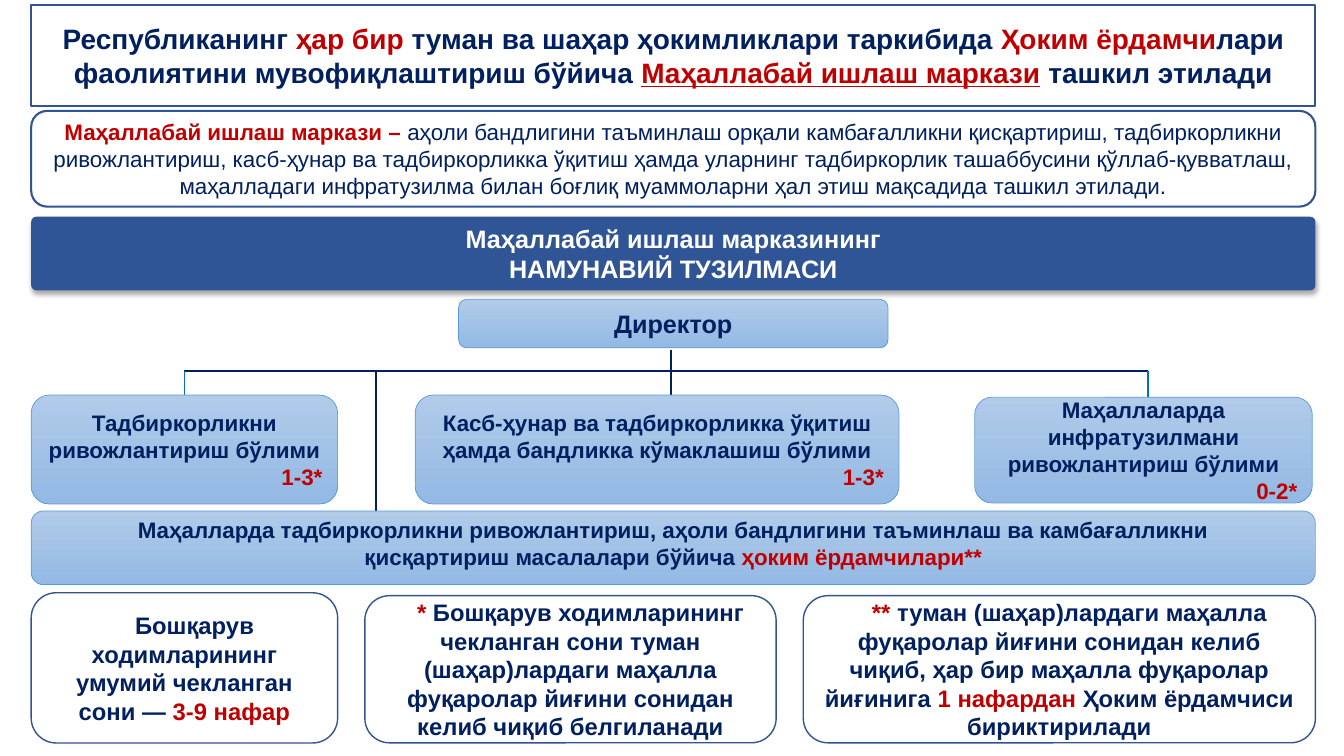
"""Build the slide on the structure of the neighbourhood work centre."""
import pptx
import pptx.dml.color
import pptx.enum.shapes
import pptx.enum.text
import pptx.oxml
import pptx.oxml.ns
import pptx.util

Pt = pptx.util.Pt
ALIGN = pptx.enum.text.PP_ALIGN
ANCHOR = pptx.enum.text.MSO_ANCHOR

COLOURS = {
    "navy": "002060", "red": "C00000", "white": "FFFFFF", "band": "2F5597",
    "frame": "325491", "edge": "5B9BD5", "branch": "0070C0",
    "light": "B1CBE9", "dark": "93B9E4",
}
LEFT, FULL_WIDTH = 22.3, 917.3

HEADLINE = [[
    ("Республиканинг", {}), (" ҳар бир ", {"colour": "red"}),
    ("туман ва шаҳар ҳокимликлари таркибида ", {}),
    ("Ҳоким ёрдамчи", {"colour": "red"}),
    ("лари фаолиятини мувофиқлаштириш бўйича ", {}),
    ("Маҳаллабай ишлаш маркази", {"colour": "red", "underline": True}),
    (" ташкил этилади", {}),
]]
DEFINITION = [[
    ("Маҳаллабай ишлаш маркази – ", {"colour": "red"}),
    ("аҳоли бандлигини таъминлаш орқали камбағалликни қисқартириш, "
     "тадбиркорликни ривожлантириш, касб-ҳунар ва тадбиркорликка ўқитиш "
     "ҳамда уларнинг тадбиркорлик ташаббусини қўллаб-қувватлаш, "
     "маҳалладаги инфратузилма билан боғлиқ муаммоларни ҳал этиш "
     "мақсадида ташкил этилади.", {"bold": False}),
]]
STRUCTURE = [[("Маҳаллабай ишлаш марказининг", {})],
             [("НАМУНАВИЙ ТУЗИЛМАСИ", {})]]
DIRECTOR = [[("Директор", {})]]
DEPARTMENTS = [
    ("Тадбиркорликни ривожлантириш бўлими", "1-3*", (LEFT, 282.2, 218.9, 77.8)),
    ("Касб-ҳунар ва тадбиркорликка ўқитиш ҳамда бандликка кўмаклашиш бўлими",
     "1-3*", (296.6, 282.2, 345.6, 77.8)),
    ("Маҳаллаларда инфратузилмани ривожлантириш бўлими", "0-2*",
     (696.2, 283.7, 241.2, 75.6)),
]
ASSISTANTS = [[
    ("Маҳалларда тадбиркорликни ривожлантириш, аҳоли бандлигини таъминлаш "
     "ва камбағалликни", {}),
    ("\n", {}),
    ("қисқартириш масалалари бўйича ", {}),
    ("ҳоким ёрдамчилари**", {"colour": "red"}),
]]
NOTES = [
    ([("Бошқарув ходимларининг умумий чекланган сони — ", {}),
      ("3-9 нафар", {"colour": "red"})], (LEFT, 423.4, 218.9, 107.3)),
    ([("*", {"colour": "red"}),
      (" Бошқарув ходимларининг чекланган сони туман (шаҳар)лардаги маҳалла "
       "фуқаролар йиғини сонидан келиб чиқиб белгиланади", {})],
     (260.6, 425.5, 293.8, 105.1)),
    ([("**", {"colour": "red"}),
      (" туман (шаҳар)лардаги маҳалла фуқаролар йиғини сонидан келиб чиқиб, "
       "ҳар бир маҳалла фуқаролар йиғинига ", {}),
      ("1 нафардан", {"colour": "red"}),
      (" Ҳоким ёрдамчиси бириктирилади", {})],
     (573.8, 425.5, 365.8, 105.1)),
]
BRANCH_Y, ASSISTANTS_Y = 265, 365
BRANCH_LEFT, BRANCH_RIGHT, CENTRE, STAFF_X = 131.8, 820.1, 479.2, 268.6
BRANCHES = [
    ((BRANCH_LEFT, BRANCH_Y), (BRANCH_RIGHT, BRANCH_Y), "navy"),
    ((BRANCH_LEFT, BRANCH_Y), (BRANCH_LEFT, 282.2), "branch"),
    ((BRANCH_RIGHT, BRANCH_Y), (BRANCH_RIGHT, 283.7), "branch"),
    ((CENTRE, 249.8), (CENTRE, 282.2), "navy"),
    ((STAFF_X, BRANCH_Y), (STAFF_X, ASSISTANTS_Y), "navy"),
]


def rgb(name):
    """Return the named colour."""
    return pptx.dml.color.RGBColor.from_string(COLOURS[name])


def write(shape, paragraphs, size=16, colour="navy", aligns=(), indent=0,
          anchor=ANCHOR.MIDDLE, bottom=3.6):
    """Fill a shape with paragraphs of formatted runs."""
    frame = shape.text_frame
    frame.word_wrap = True
    frame.auto_size = pptx.enum.text.MSO_AUTO_SIZE.NONE
    frame.vertical_anchor = anchor
    frame.margin_bottom = Pt(bottom)
    for number, runs in enumerate(paragraphs):
        line = frame.add_paragraph() if number else frame.paragraphs[0]
        line.alignment = aligns[number] if aligns else ALIGN.CENTER
        if indent:
            line._p.get_or_add_pPr().set("indent", str(Pt(indent)))
        for words, style in runs:
            if words == "\n":
                line.add_line_break()
                continue
            run = line.add_run()
            run.text = words
            run.font.name = "Arial"
            run.font.size = Pt(size)
            run.font.bold = style.get("bold", True)
            run.font.underline = style.get("underline", False)
            run.font.color.rgb = rgb(style.get("colour", colour))


def paint(shape, fill="white", edge="frame", weight=1.5):
    """Give a shape its fill and outline."""
    if fill == "gradient":
        shape.fill.gradient()
        shape.fill.gradient_angle = 270
        for stop, name in zip(shape.fill.gradient_stops, ("light", "dark")):
            stop.color.rgb = rgb(name)
    else:
        shape.fill.solid()
        shape.fill.fore_color.rgb = rgb(fill)
    if edge:
        shape.line.color.rgb = rgb(edge)
        shape.line.width = Pt(weight)
    else:
        shape.line.fill.background()
    shape.shadow.inherit = False


def add_box(slide, place, paragraphs, look, **text_format):
    """Add a rounded box with text."""
    box = slide.shapes.add_shape(
        pptx.enum.shapes.MSO_SHAPE.ROUNDED_RECTANGLE, *map(Pt, place))
    paint(box, **look)
    write(box, paragraphs, **text_format)
    return box


def add_branch(slide, start, end, colour):
    """Add one straight line of the organisation chart."""
    branch = slide.shapes.add_connector(
        pptx.enum.shapes.MSO_CONNECTOR.STRAIGHT, *map(Pt, start + end))
    branch.line.color.rgb = rgb(colour)
    branch.line.width = Pt(1)
    branch._element.spPr.append(pptx.oxml.parse_xml(
        f"<a:effectLst {pptx.oxml.ns.nsdecls('a')}/>"))


def main():
    """Compose and save the slide."""
    deck = pptx.Presentation()
    deck.slide_width, deck.slide_height = Pt(960), Pt(540)
    slide = deck.slides.add_slide(deck.slide_layouts[5])

    headline = slide.shapes.title
    headline.left, headline.top, headline.width, headline.height = map(
        Pt, (LEFT, 3.6, FULL_WIDTH, 72))
    headline._element.spPr.append(pptx.oxml.parse_xml(
        f"<a:prstGeom {pptx.oxml.ns.nsdecls('a')} prst='roundRect'>"
        "<a:avLst/></a:prstGeom>"))
    paint(headline)
    write(headline, HEADLINE, size=20)

    add_box(slide, (LEFT, 79.2, FULL_WIDTH, 68.4), DEFINITION, {})
    structure = add_box(slide, (LEFT, 154.8, FULL_WIDTH, 52.6), STRUCTURE,
                        {"fill": "band", "edge": None}, size=18,
                        colour="white", anchor=ANCHOR.TOP)
    structure.adjustments[0] = 0.07
    structure._element.spPr.find(pptx.oxml.ns.qn("a:effectLst")).append(
        pptx.oxml.parse_xml(
            f"<a:outerShdw {pptx.oxml.ns.nsdecls('a')} blurRad='{Pt(3.5)}' "
            f"dist='{Pt(2.2)}' dir='5400000' rotWithShape='0'>"
            "<a:srgbClr val='000000'><a:alpha val='32000'/></a:srgbClr>"
            "</a:outerShdw>"))

    for start, end, colour in BRANCHES:
        add_branch(slide, start, end, colour)

    unit = {"fill": "gradient", "edge": "edge", "weight": 0.5}
    add_box(slide, (327.6, 213.8, 306.7, 34.6), DIRECTOR, unit, size=18)
    for department, staff, place in DEPARTMENTS:
        add_box(slide, place, [[(department, {})], [(staff, {"colour": "red"})]],
                unit, aligns=(ALIGN.CENTER, ALIGN.RIGHT))
    add_box(slide, (LEFT, ASSISTANTS_Y, FULL_WIDTH, 52.6), ASSISTANTS, unit,
            bottom=10)
    for note, place in NOTES:
        add_box(slide, place, [note], {"weight": 1}, size=17, indent=14.4)

    deck.save("out.pptx")


if __name__ == "__main__":
    main()
